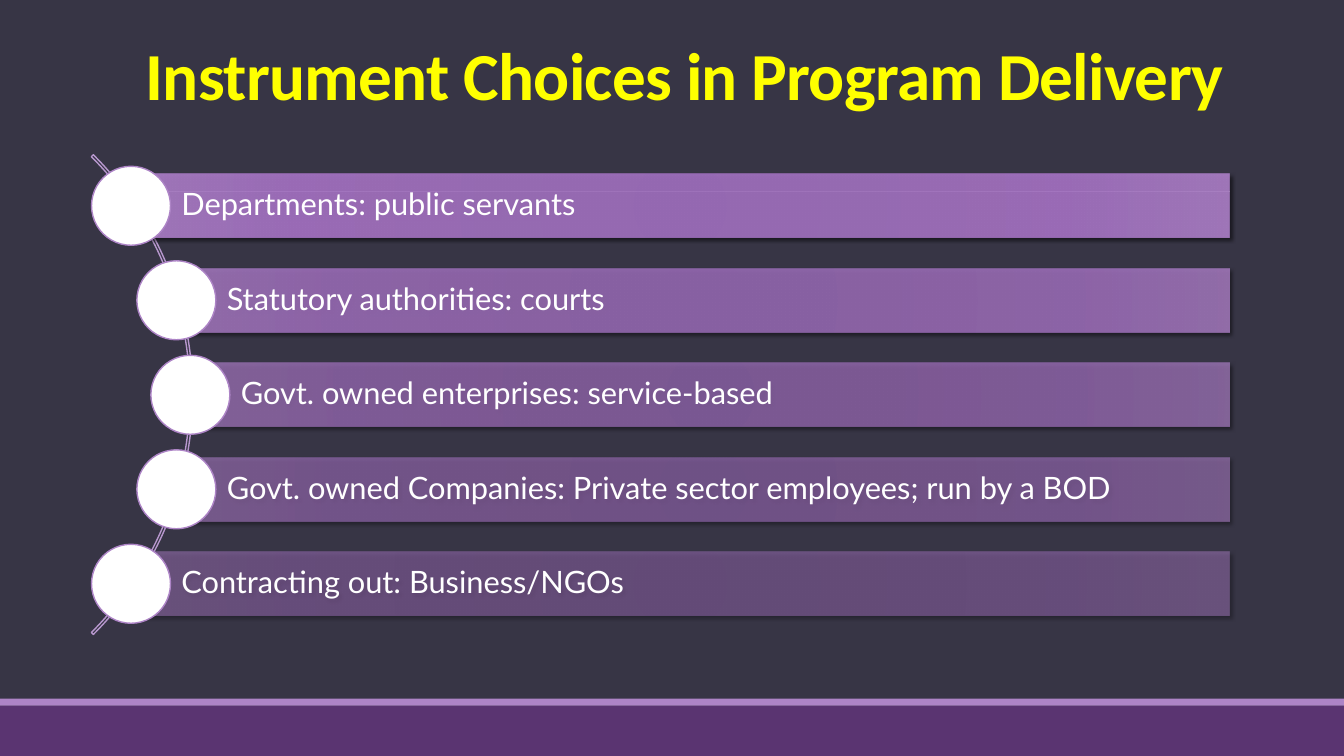
from lxml.etree import SubElement
from pptx import Presentation
from pptx.dml.color import RGBColor
from pptx.enum.shapes import MSO_CONNECTOR, MSO_SHAPE
from pptx.enum.text import MSO_ANCHOR, MSO_AUTO_SIZE, PP_ALIGN
from pptx.oxml import parse_xml
from pptx.oxml.ns import qn
from pptx.util import Pt

DRAWING_NS = "http://schemas.openxmlformats.org/drawingml/2006/main"
WIDTH, HEIGHT = 960, 540
BAR_RIGHT, BAR_HEIGHT, DOT_SIZE = 878.4, 45.4, 56.4
FIRST_CENTRE, ROW_PITCH = 147, 67.5
GRADIENT = [(0, "A372C2"), (34, "A574C2"), (70, "A875C7"), (100, "AE81C9")]

# Bar text and the left edge of its bar, which is also the dot's centre
INSTRUMENTS = [
    ("Departments: public servants", 93.6),
    ("Statutory authorities: courts", 126),
    ("Govt. owned enterprises: service-based", 136),
    ("Govt. owned Companies: Private sector employees; run by a BOD", 126),
    ("Contracting out: Business/NGOs", 93.6),
]


def colour(hex_string):
    return RGBColor.from_string(hex_string)


def add_plain_shape(slide, kind, left, top, width, height, fill=None, line=None):
    shape = slide.shapes.add_shape(kind, Pt(left), Pt(top), Pt(width), Pt(height))
    shape.shadow.inherit = False
    if fill:
        shape.fill.solid()
        shape.fill.fore_color.rgb = colour(fill)
    else:
        shape.fill.background()
    if line:
        shape.line.color.rgb = colour(line)
        shape.line.width = Pt(1)
    else:
        shape.line.fill.background()
    return shape


def set_gradient(shape, opacity):
    stops = "".join(
        f'<a:gs pos="{position * 1000}"><a:srgbClr val="{shade}">'
        f'<a:alpha val="{opacity * 1000}"/></a:srgbClr></a:gs>'
        for position, shade in GRADIENT
    )
    gradient = parse_xml(
        f'<a:gradFill xmlns:a="{DRAWING_NS}" rotWithShape="1"><a:gsLst>{stops}</a:gsLst>'
        '<a:path path="circle"><a:fillToRect l="100000" t="100000" r="100000" b="100000"/>'
        "</a:path></a:gradFill>"
    )
    properties = shape._element.spPr
    properties.replace(properties.find(qn("a:solidFill")), gradient)


def set_shadow(shape):
    effects = shape._element.spPr.find(qn("a:effectLst"))
    effects.append(parse_xml(
        f'<a:outerShdw xmlns:a="{DRAWING_NS}" blurRad="{Pt(3)}" dist="{Pt(2)}" dir="2700000"'
        ' algn="ctr" rotWithShape="0"><a:srgbClr val="000000"><a:alpha val="60000"/>'
        "</a:srgbClr></a:outerShdw>"
    ))


def style_paragraph(paragraph, font_name, size, text_colour, spacing, align):
    paragraph.font.name = font_name
    paragraph.font.size = Pt(size)
    paragraph.font.color.rgb = colour(text_colour)
    paragraph.line_spacing = spacing
    paragraph.alignment = align


def add_title(slide, text):
    title = slide.shapes.title
    title.left, title.top, title.width, title.height = Pt(60), Pt(12), Pt(858), Pt(73.4)
    frame = title.text_frame
    frame.text = text
    frame.word_wrap = True
    frame.auto_size = MSO_AUTO_SIZE.NONE
    frame.vertical_anchor = MSO_ANCHOR.BOTTOM
    heading = frame.paragraphs[0]
    style_paragraph(heading, "Calibri", 48, "FFFF00", 0.85, PP_ALIGN.CENTER)
    heading.font.bold = True
    heading.runs[0]._r.get_or_add_rPr().set("spc", "-50")


def add_rule(slide, left, right, y):
    rule = slide.shapes.add_connector(MSO_CONNECTOR.STRAIGHT, Pt(left), Pt(y), Pt(right), Pt(y))
    rule.line.color.rgb = colour("FFFFFF")
    rule.line.width = Pt(0.5)
    SubElement(rule._element.spPr, qn("a:effectLst"))


def add_bar(slide, text, left, centre, opacity):
    bar = add_plain_shape(slide, MSO_SHAPE.RECTANGLE, left, centre - BAR_HEIGHT / 2,
                          BAR_RIGHT - left, BAR_HEIGHT, "A372C2")
    set_gradient(bar, opacity)
    set_shadow(bar)
    frame = bar.text_frame
    frame.text = text
    frame.word_wrap = True
    frame.vertical_anchor = MSO_ANCHOR.MIDDLE
    frame.margin_left = Pt(36)
    frame.margin_top = frame.margin_right = frame.margin_bottom = Pt(4.4)
    style_paragraph(frame.paragraphs[0], "Lato", 22, "FFFFFF", 0.9, PP_ALIGN.LEFT)


def add_dot(slide, centre_x, centre_y):
    add_plain_shape(slide, MSO_SHAPE.OVAL, centre_x - DOT_SIZE / 2, centre_y - DOT_SIZE / 2,
                    DOT_SIZE, DOT_SIZE, "FFFFFF", "AD84C6")


def main():
    deck = Presentation()
    deck.slide_width, deck.slide_height = Pt(WIDTH), Pt(HEIGHT)
    slide = deck.slides.add_slide(deck.slide_layouts[5])

    # Background, footer bands and rule
    slide.background.fill.solid()
    slide.background.fill.fore_color.rgb = colour("373545")
    add_plain_shape(slide, MSO_SHAPE.RECTANGLE, 0, 504, WIDTH, 36, "5A3471")
    add_plain_shape(slide, MSO_SHAPE.RECTANGLE, 0, 499, WIDTH, 5, "AD84C6")
    add_rule(slide, 93.6, BAR_RIGHT, 136.8)

    add_title(slide, "Instrument Choices in Program Delivery")

    # Thin arc that joins the dots
    arc = add_plain_shape(slide, MSO_SHAPE.BLOCK_ARC, -347, 39.6, 484.6, 484.6, line="B797CD")
    for index, value in enumerate((189, 27, 0.004)):
        arc.adjustments[index] = value

    # Bars fade from top to bottom
    for row, (text, left) in enumerate(INSTRUMENTS):
        centre = FIRST_CENTRE + row * ROW_PITCH
        add_bar(slide, text, left, centre, 90 - 10 * row)
        add_dot(slide, left, centre)

    deck.save("out.pptx")


if __name__ == "__main__":
    main()
